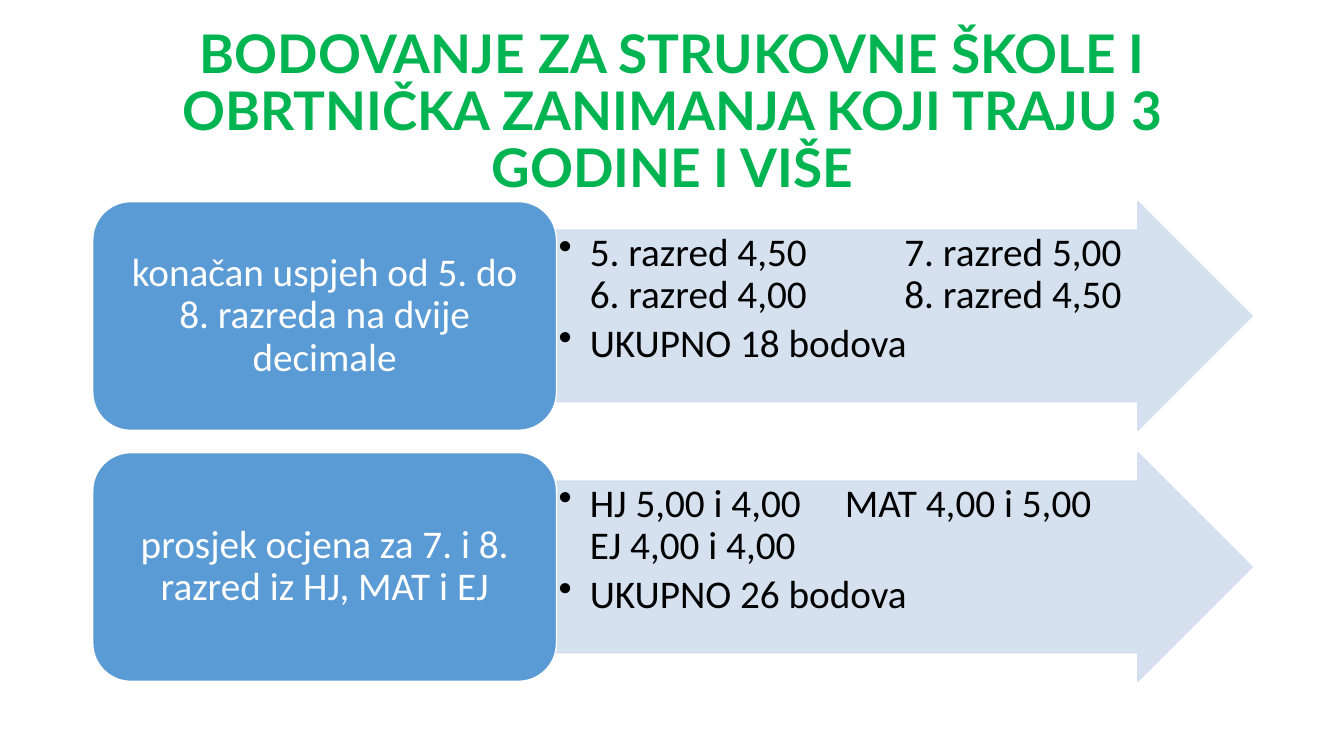
from lxml import etree
from pptx import Presentation
from pptx.dml.color import RGBColor
from pptx.enum.shapes import MSO_SHAPE
from pptx.enum.text import MSO_ANCHOR, MSO_AUTO_SIZE, PP_ALIGN
from pptx.oxml.ns import qn
from pptx.util import Inches, Pt

ARROW, CARD = MSO_SHAPE.RIGHT_ARROW, MSO_SHAPE.ROUNDED_RECTANGLE
TOP, MIDDLE = MSO_ANCHOR.TOP, MSO_ANCHOR.MIDDLE
LEFT, CENTER = PP_ALIGN.LEFT, PP_ALIGN.CENTER

MARGIN, CONTENT_WIDTH = 0.92, 11.5
CARD_WIDTH, ARROW_WIDTH = 0.4 * CONTENT_WIDTH, 0.6 * CONTENT_WIDTH
FIRST_ROW, ROW_HEIGHT, ROW_PITCH = 2, 2.27, 2.49
BULLET_INDENT = 0.31

TITLE = "BODOVANJE ZA STRUKOVNE ŠKOLE I OBRTNIČKA ZANIMANJA KOJI TRAJU 3 GODINE I VIŠE"
TITLE_FONT = {"name": "Lato", "size": Pt(38), "bold": True}
BODY_FONT = {"name": "Calibri", "size": Pt(28)}

# Card text, bullets (\v breaks a line, \t moves to the second column), column position
CRITERIA = [
    ("konačan uspjeh od 5. do 8. razreda na dvije decimale",
     ["5. razred 4,50\t7. razred 5,00\v6. razred 4,00\t8. razred 4,50",
      "UKUPNO 18 bodova"], 3.43),
    ("prosjek ocjena za 7. i 8. razred iz HJ, MAT i EJ",
     ["HJ 5,00 i 4,00\tMAT 4,00 i 5,00\vEJ 4,00 i 4,00",
      "UKUPNO 26 bodova"], 2.84),
]


def set_color(color_format, value):
    color_format.rgb = RGBColor.from_string(value)


def set_format(target, values):
    for name, value in values.items():
        setattr(target, name, value)


def format_para(para, font, color, align, spacing):
    set_format(para, {"alignment": align, "line_spacing": spacing})
    set_format(para.font, font)
    set_color(para.font.color, color)


def set_frame(frame, anchor, side, edge):
    set_format(frame, {
        "word_wrap": True, "auto_size": MSO_AUTO_SIZE.NONE, "vertical_anchor": anchor,
        "margin_left": Inches(side), "margin_right": Inches(side),
        "margin_top": Inches(edge), "margin_bottom": Inches(edge)})


def place(shape, left, top, width, height):
    set_format(shape, {"left": Inches(left), "top": Inches(top),
                       "width": Inches(width), "height": Inches(height)})


def add_block(page, kind, left, top, width, fill, line):
    block = page.shapes.add_shape(kind, Inches(left), Inches(top),
                                  Inches(width), Inches(ROW_HEIGHT))
    block.shadow.inherit = False
    block.fill.solid()
    set_color(block.fill.fore_color, fill)
    set_color(block.line.color, line)
    block.line.width = Pt(1)
    return block


def make_translucent(shape, percent):
    for color in shape.fill._xPr.iter(qn("a:srgbClr")):
        etree.SubElement(color, qn("a:alpha"), val=str(percent * 1000))


def add_bullet(para, column):
    """Give the paragraph a hanging bullet and one tab stop."""
    properties = para._p.get_or_add_pPr()
    indent = Inches(BULLET_INDENT)
    properties.set("marL", str(indent))
    properties.set("indent", str(-indent))
    etree.SubElement(properties, qn("a:buChar"), char="•")
    tabs = etree.SubElement(properties, qn("a:tabLst"))
    etree.SubElement(tabs, qn("a:tab"), pos=str(Inches(column)), algn="l")


def add_title(page):
    title = page.shapes.title
    place(title, MARGIN, 0.4, CONTENT_WIDTH, 1.45)
    title.text_frame.text = TITLE
    set_frame(title.text_frame, MIDDLE, 0.1, 0.05)
    format_para(title.text_frame.paragraphs[0], TITLE_FONT, "00B451", CENTER, 0.89)


def add_points_arrow(page, top, points, column):
    arrow = add_block(page, ARROW, MARGIN + CARD_WIDTH, top, ARROW_WIDTH,
                      "D2DEEF", "D2DEEF")
    arrow.adjustments[0], arrow.adjustments[1] = 0.75, 0.5
    make_translucent(arrow, 90)
    frame = arrow.text_frame
    set_frame(frame, TOP, 0.02, 0.02)
    for index, point in enumerate(points):
        para = frame.add_paragraph() if index else frame.paragraphs[0]
        para.text = point
        add_bullet(para, column)
        format_para(para, BODY_FONT, "000000", LEFT, 0.9)
        para.space_after = Pt(5)


def add_criterion_card(page, top, text):
    card = add_block(page, CARD, MARGIN, top, CARD_WIDTH, "5B9BD5", "FFFFFF")
    card.text_frame.text = text
    set_frame(card.text_frame, MIDDLE, 0.12, 0.06)
    format_para(card.text_frame.paragraphs[0], BODY_FONT, "FFFFFF", CENTER, 0.9)


def main():
    deck = Presentation()
    deck.slide_width, deck.slide_height = Inches(13.33), Inches(7.5)
    page = deck.slides.add_slide(deck.slide_layouts[5])
    add_title(page)
    for row, (criterion, points, column) in enumerate(CRITERIA):
        top = FIRST_ROW + row * ROW_PITCH
        add_points_arrow(page, top, points, column)
        add_criterion_card(page, top, criterion)
    deck.save("out.pptx")


if __name__ == "__main__":
    main()
